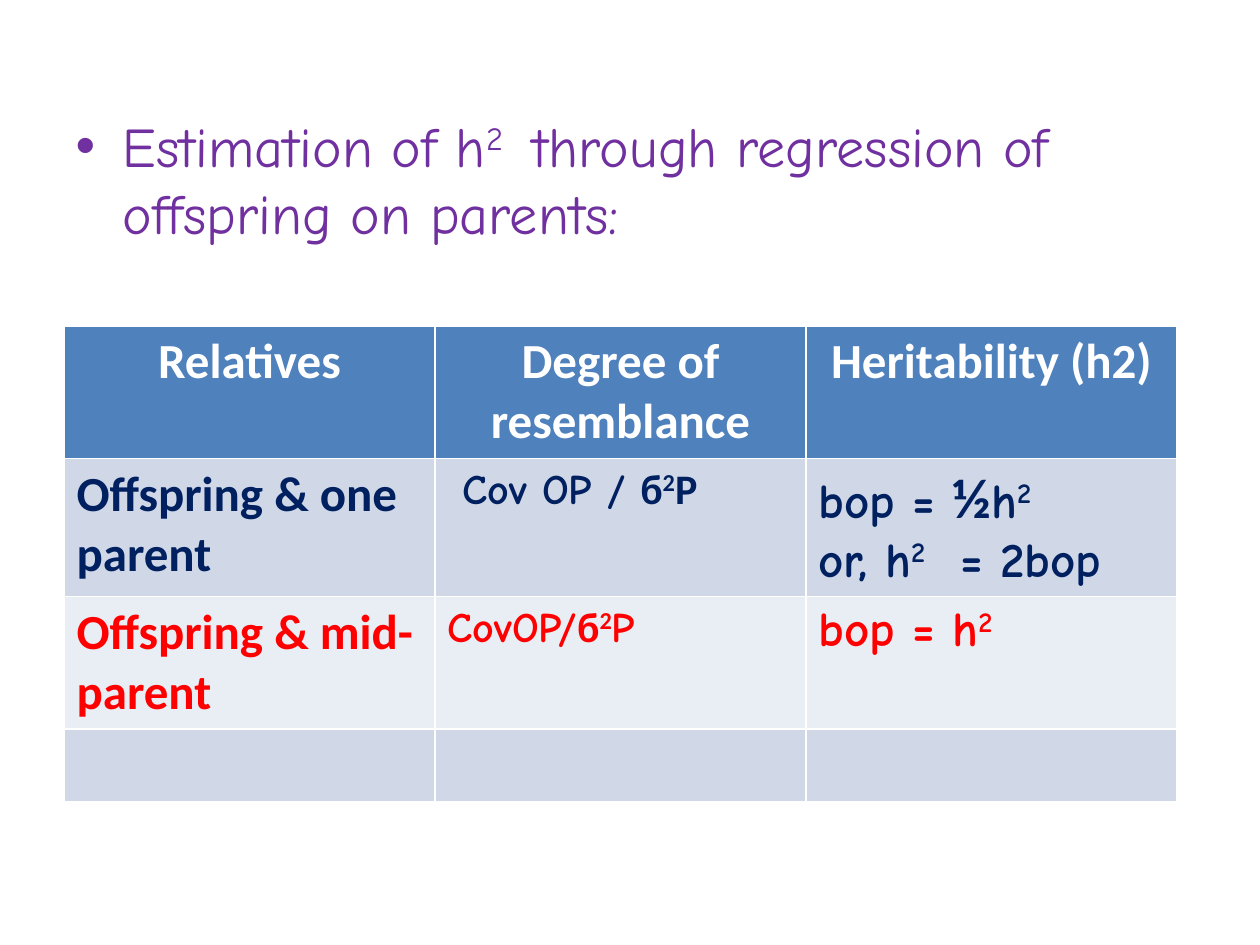
from pptx import Presentation
from pptx.dml.color import RGBColor
from pptx.enum.text import PP_ALIGN
from pptx.util import Pt

PX = 914400 / 126
COMIC, CALIBRI = "Comic Neue", "Calibri"
PURPLE, WHITE, NAVY, RED = "7030A0", "FFFFFF", "002060", "FF0000"
HEADER_FILL, BAND_DARK, BAND_LIGHT = "4F81BD", "D0D8E8", "E9EDF4"


def px(length):
    return round(length * PX)


def add_runs(paragraph, pieces, color, bold):
    """Add (text, font, size) pieces; a fourth item True raises the text."""
    for text, font_name, size, *raised in pieces:
        run = paragraph.add_run()
        run.text = text
        run.font.name = font_name
        run.font.size = Pt(size)
        run.font.bold = bold
        run.font.color.rgb = RGBColor.from_string(color)
        if raised:
            run.font._element.set("baseline", "30000")


prs = Presentation()
prs.slide_width, prs.slide_height = px(1260), px(945)
slide = prs.slides.add_slide(prs.slide_layouts[1])
title = slide.shapes.title
title._element.getparent().remove(title._element)

# Statement
statement = slide.placeholders[1]
statement.left, statement.top = px(63), px(105)
statement.width, statement.height = px(1134), px(740)
add_runs(statement.text_frame.paragraphs[0], [
    ("Estimation of h", COMIC, 32),
    ("2 ", COMIC, 32, True),
    (" through regression of offspring on parents:", COMIC, 32),
], PURPLE, False)

# Each cell is a list of paragraphs, each paragraph a list of runs
rows = [
    (131, HEADER_FILL, WHITE, [
        [[("Relatives", CALIBRI, 28)]],
        [[("Degree of resemblance", CALIBRI, 28)]],
        [[("Heritability (h2)", CALIBRI, 28)]],
    ]),
    (138, BAND_DARK, NAVY, [
        [[("Offspring & one parent", CALIBRI, 28)]],
        [[(" Cov OP / ", COMIC, 24), ("б", CALIBRI, 24),
          ("2", CALIBRI, 24, True), ("P", CALIBRI, 24)]],
        [[("bop = ", COMIC, 28), ("½", CALIBRI, 32),
          ("h", COMIC, 28), ("2", COMIC, 28, True)],
         [("or, h", COMIC, 28), ("2", COMIC, 28, True),
          ("  = 2bop", COMIC, 28)]],
    ]),
    (131, BAND_LIGHT, RED, [
        [[("Offspring & mid-parent", CALIBRI, 28)]],
        [[("CovOP/", COMIC, 24), ("б", CALIBRI, 24),
          ("2", CALIBRI, 24, True), ("P", COMIC, 24)]],
        [[("bop = h", COMIC, 28), ("2", COMIC, 28, True)]],
    ]),
    (73, BAND_DARK, NAVY, [[], [], []]),
]

table_height = sum(height for height, *_ in rows)
heritability = slide.shapes.add_table(
    len(rows), 3, px(64), px(326), px(1113), px(table_height)).table
for column in heritability.columns:
    column.width = px(371)

for row_index, (height, fill, color, contents) in enumerate(rows):
    heritability.rows[row_index].height = px(height)
    for column_index, lines in enumerate(contents):
        cell = heritability.cell(row_index, column_index)
        cell.fill.solid()
        cell.fill.fore_color.rgb = RGBColor.from_string(fill)
        frame = cell.text_frame
        for line_index, pieces in enumerate(lines):
            paragraph = frame.add_paragraph() if line_index else frame.paragraphs[0]
            if row_index == 0:
                paragraph.alignment = PP_ALIGN.CENTER
            add_runs(paragraph, pieces, color, True)

prs.save("out.pptx")
